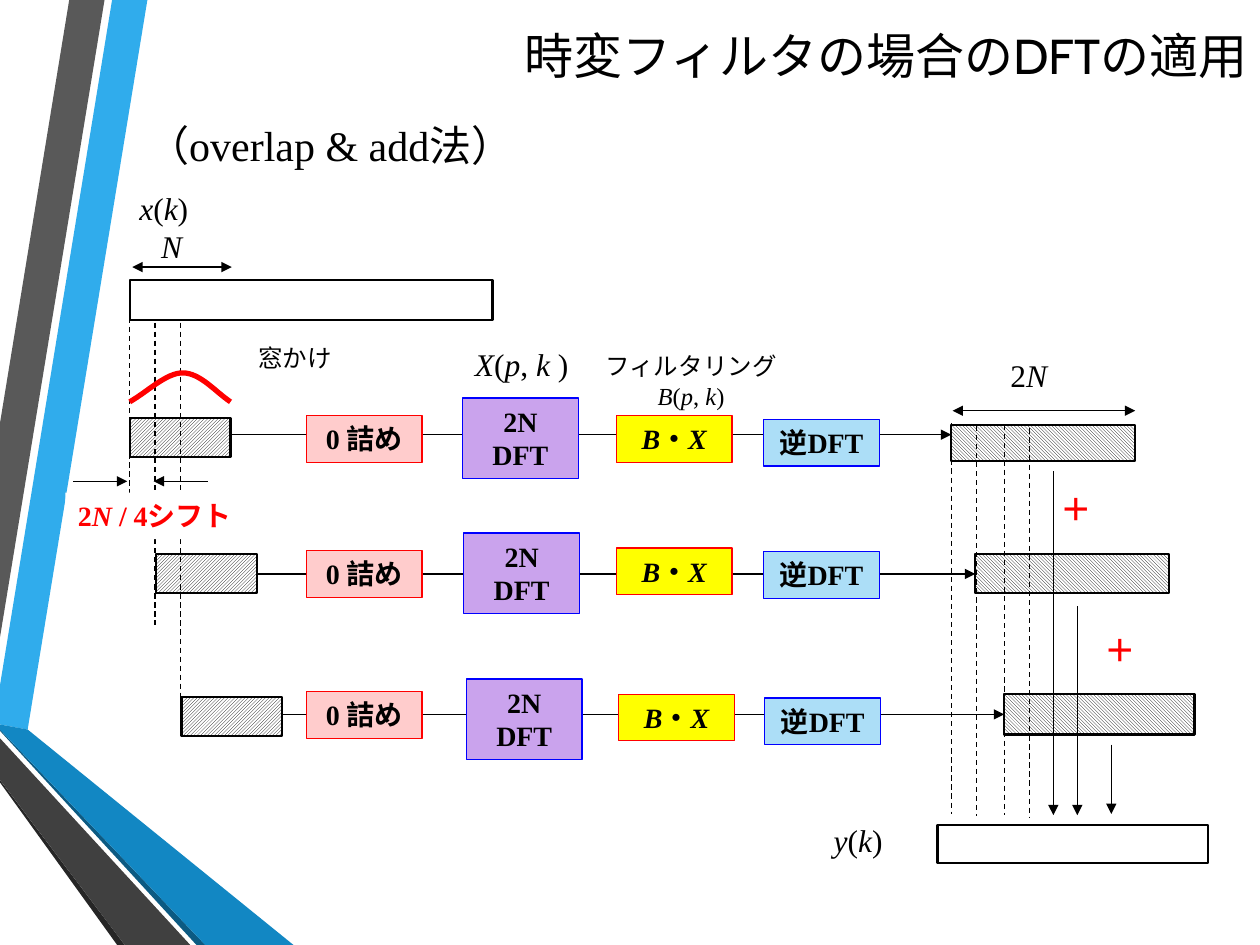
"""Build the slide on applying the DFT to a time-varying filter (overlap & add)."""
from dataclasses import dataclass

from lxml.etree import SubElement
from pptx import Presentation
from pptx.dml.color import RGBColor
from pptx.enum.dml import MSO_LINE_DASH_STYLE as Dash, MSO_PATTERN_TYPE as Pattern
from pptx.enum.shapes import MSO_CONNECTOR as Connector, MSO_SHAPE as Shape
from pptx.enum.text import MSO_ANCHOR as Anchor, MSO_AUTO_SIZE as AutoSize, PP_ALIGN as Align
from pptx.oxml.ns import qn
from pptx.util import Emu, Pt

PX = 9144
INDENT = 29
BODY_FONT = "Times New Roman"
TITLE_FONT = "Cabin"
COLORS = {
    "black": "000000", "white": "FFFFFF", "red": "FF0000", "blue": "0000FF",
    "pink": "FFCCCC", "violet": "CAA3ED", "yellow": "FFFF00", "pale": "ACDEF7",
    "sky": "30ACEC", "grey": "595959", "ink": "262626", "navy": "0C5A82",
    "azure": "1287C3", "charcoal": "404040",
}


@dataclass(frozen=True)
class Box:
    left: int
    top: int
    width: int
    height: int

    @property
    def middle(self) -> float:
        return self.top + self.height / 2


@dataclass(frozen=True)
class Label:
    text: str
    box: Box
    size: int = 18
    align: Align = Align.LEFT
    color: str = "black"
    bold: bool = False


@dataclass(frozen=True)
class Stage:
    text: str
    height: int
    fill: str
    line: str
    corners: tuple


@dataclass(frozen=True)
class Flow:
    block: Box
    output: Box
    y: int


@dataclass(frozen=True)
class Line:
    start: tuple
    end: tuple
    dashed: bool = False
    head: bool = False
    tail: bool = False


RIBBONS = [
    ("sky", [(0, 544), (0, 575), (22, 579), (117, 0), (89, 0)]),
    ("grey", [(83, 0), (55, 0), (0, 336), (0, 506)]),
    ("ink", [(0, 619), (0, 621), (93, 750), (99, 750)]),
    ("navy", [(0, 579), (0, 580), (156, 750), (163, 750)]),
    ("azure", [(0, 579), (163, 750), (233, 750), (22, 579), (0, 575)]),
    ("charcoal", [(0, 619), (99, 750), (151, 750), (0, 586)]),
]
SIGNALS = [Box(103, 222, 288, 32), Box(744, 655, 215, 30)]
FLOWS = [
    Flow(Box(103, 332, 80, 31), Box(755, 337, 146, 29), 345),
    Flow(Box(124, 440, 80, 31), Box(774, 440, 154, 31), 456),
    Flow(Box(144, 553, 80, 31), Box(797, 551, 151, 32), 567),
]
DASHES = [(103, 238, 399), (123, 256, 496), (143, 256, 566),
          (755, 336, 646), (775, 338, 648), (797, 337, 647), (817, 340, 649)]
ADDITIONS = [(836, 374, 647), (855, 481, 647), (882, 591, 646)]
ARROWS = [
    Line((105, 212), (184, 212), head=True, tail=True),
    Line((756, 326), (901, 326), head=True, tail=True),
    Line((58, 382), (101, 382), tail=True),
    Line((165, 382), (122, 382), tail=True),
]
STAGES = [
    Stage("0 詰め", 37, "pink", "red", ((243, 330), (243, 437), (243, 549))),
    Stage("2N\nDFT", 64, "violet", "blue", ((367, 316), (368, 423), (370, 539))),
    Stage("*B*・*X*", 37, "yellow", "red", ((489, 330), (489, 435), (491, 551))),
    Stage("逆DFT", 37, "pale", "blue", ((606, 333), (606, 438), (607, 554))),
]
STAGE_WIDTH = 92
SHIFT = Label("2*N */ 4シフト", Box(52, 391, 143, 37), 16, color="red", bold=True)
LABELS = [
    Label("（overlap & add法）", Box(107, 90, 900, 50), 24),
    Label("*N*", Box(118, 175, 53, 40)),
    Label("*x*(*k*)", Box(68, 145, 124, 40), align=Align.CENTER),
    Label("2*N*", Box(792, 278, 69, 40)),
    Label("*X*(*p*, *k *)", Box(363, 269, 102, 40), align=Align.CENTER),
    Label("*y*(*k*)", Box(619, 647, 124, 40), align=Align.CENTER),
    Label("フィルタリング\n*B*(*p*,* k*)", Box(465, 274, 167, 57), 14, Align.CENTER),
    Label("＋", Box(832, 384, 69, 40), color="red", bold=True),
    Label("＋", Box(867, 496, 69, 40), color="red", bold=True),
    Label("窓かけ", Box(195, 267, 139, 34), 14),
]
WINDOW = [[(103, 319), (117, 311), (132, 296), (145, 296)],
          [(145, 296), (159, 296), (171, 311), (183, 319)]]


def rgb(name: str) -> RGBColor:
    return RGBColor.from_string(COLORS[name])


def place(box: Box) -> list:
    return [Emu(value * PX) for value in (box.left, box.top, box.width, box.height)]


def write(shape, label: Label) -> None:
    """Write a label whose starred parts are italic."""
    frame = shape.text_frame
    frame.text = label.text.replace("*", "")
    frame.word_wrap = True
    frame.auto_size = AutoSize.SHAPE_TO_FIT_TEXT
    frame.vertical_anchor = Anchor.TOP
    for paragraph, line in zip(frame.paragraphs, label.text.split("\n")):
        paragraph.text = ""
        paragraph.alignment = label.align
        properties = paragraph._p.get_or_add_pPr()
        properties.set("marL", str(INDENT * PX))
        properties.set("indent", str(-INDENT * PX))
        for index, part in enumerate(line.split("*")):
            if part:
                run = paragraph.add_run()
                run.text = part
                font = run.font
                font.name, font.size = BODY_FONT, Pt(label.size)
                font.bold, font.italic = label.bold, index % 2 == 1
                font.color.rgb = rgb(label.color)


def draw_box(slide, box: Box, fill="white", line="black", width=1.25, pattern=None):
    shape = slide.shapes.add_shape(Shape.RECTANGLE, *place(box))
    shape.shadow.inherit = False
    if pattern is None:
        shape.fill.solid()
        shape.fill.fore_color.rgb = rgb(fill)
    else:
        shape.fill.patterned()
        shape.fill.pattern = pattern
        shape.fill.fore_color.rgb = rgb("black")
        shape.fill.back_color.rgb = rgb("white")
    if line is None:
        shape.line.fill.background()
    else:
        shape.line.color.rgb = rgb(line)
        shape.line.width = Pt(width)
    return shape


def draw_line(slide, line: Line):
    ends = [Emu(value * PX) for value in (*line.start, *line.end)]
    connector = slide.shapes.add_connector(Connector.STRAIGHT, *ends)
    connector.line.color.rgb = rgb("black")
    connector.line.width = Pt(0.75)
    if line.dashed:
        connector.line.dash_style = Dash.DASH
    outline = connector.line._get_or_add_ln()
    for tag, shown in (("a:headEnd", line.head), ("a:tailEnd", line.tail)):
        if shown:
            SubElement(outline, qn(tag)).set("type", "triangle")
    SubElement(connector._element.spPr, qn("a:effectLst"))
    return connector


def draw_outline(slide, points: list, close: bool):
    start, *rest = [(round(x * PX), round(y * PX)) for x, y in points]
    builder = slide.shapes.build_freeform(*start)
    builder.add_line_segments(rest, close=close)
    shape = builder.convert_to_shape()
    shape.shadow.inherit = False
    return shape


def bezier(controls: list, steps: int = 16) -> list:
    weights = [((1 - t) ** 3, 3 * t * (1 - t) ** 2, 3 * t * t * (1 - t), t ** 3)
               for t in (step / steps for step in range(steps + 1))]
    return [tuple(sum(w * point[axis] for w, point in zip(row, controls)) for axis in (0, 1))
            for row in weights]


def draw_flows(slide) -> None:
    """Draw the input and output blocks, then the arrows between them."""
    blocks = [draw_box(slide, flow.block, pattern=Pattern.DARK_UPWARD_DIAGONAL) for flow in FLOWS]
    outputs = [draw_box(slide, flow.output, pattern=Pattern.LIGHT_DOWNWARD_DIAGONAL)
               for flow in FLOWS]
    for flow, block, output in zip(FLOWS, blocks, outputs):
        start = (flow.block.left + flow.block.width, flow.y)
        arrow = draw_line(slide, Line(start, (flow.output.left, flow.y), tail=True))
        if abs(flow.block.middle - flow.y) < 1:
            arrow.begin_connect(block, 3)
        if abs(flow.output.middle - flow.y) < 1:
            arrow.end_connect(output, 1)


def draw_title(slide) -> None:
    title = slide.shapes.title
    title.left, title.top, title.width, title.height = place(Box(157, 0, 843, 87))
    title.text_frame.text = "時変フィルタの場合のDFTの適用"
    title.text_frame.vertical_anchor = Anchor.MIDDLE
    paragraph = title.text_frame.paragraphs[0]
    paragraph.alignment = Align.RIGHT
    font = paragraph.runs[0].font
    font.name, font.size, font.color.rgb = TITLE_FONT, Pt(28), rgb("black")


def main() -> None:
    presentation = Presentation()
    presentation.slide_width, presentation.slide_height = Emu(1000 * PX), Emu(750 * PX)
    slide = presentation.slides.add_slide(presentation.slide_layouts[5])
    draw_title(slide)
    for color, points in RIBBONS:
        ribbon = draw_outline(slide, points, True)
        ribbon.fill.solid()
        ribbon.fill.fore_color.rgb = rgb(color)
        ribbon.line.fill.background()
    for box in SIGNALS:
        draw_box(slide, box)
    draw_flows(slide)
    for x, top, bottom in DASHES:
        draw_line(slide, Line((x, top), (x, bottom), dashed=True))
    for x, top, bottom in ADDITIONS:
        draw_line(slide, Line((x, top), (x, bottom), tail=True))
    for arrow in ARROWS:
        draw_line(slide, arrow)
    write(draw_box(slide, SHIFT.box, line=None), SHIFT)
    for stage in STAGES:
        for left, top in stage.corners:
            box = Box(left, top, STAGE_WIDTH, stage.height)
            shape = draw_box(slide, box, stage.fill, stage.line, 0.75)
            write(shape, Label(stage.text, box, 16, Align.CENTER, bold=True))
    for label in LABELS:
        write(slide.shapes.add_textbox(*place(label.box)), label)
    window = draw_outline(slide, bezier(WINDOW[0]) + bezier(WINDOW[1])[1:], False)
    window.fill.background()
    window.line.color.rgb = rgb("red")
    window.line.width = Pt(3)
    presentation.save("out.pptx")


if __name__ == "__main__":
    main()
